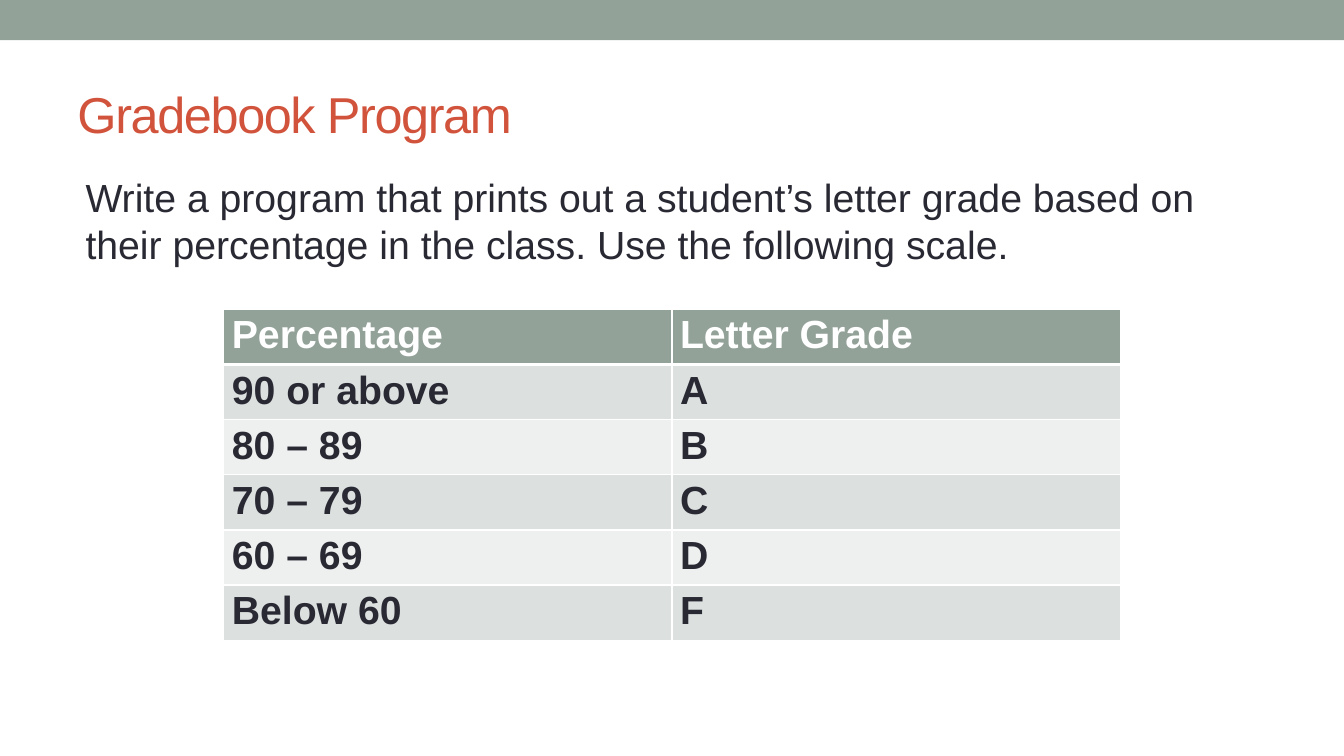
from lxml import etree
from pptx import Presentation, util as u
from pptx.dml.color import RGBColor
from pptx.enum import shapes, text
from pptx.oxml.ns import qn

COLORS = {"sage": "93A299", "rust": "D2533C", "ink": "292934",
          "white": "FFFFFF", "dark": "DCE0DE", "light": "EEF0EF"}
GRADES = [("Percentage", "Letter Grade"), ("90 or above", "A"),
          ("80 – 89", "B"), ("70 – 79", "C"),
          ("60 – 69", "D"), ("Below 60", "F")]


class Deck:
    def __init__(self, slide, font):
        self.slide = slide
        self.font = font

    def color(self, name):
        return RGBColor.from_string(COLORS[name])

    def paint(self, item, name):
        item.fill.solid()
        item.fill.fore_color.rgb = self.color(name)

    def run(self, para, words, size, color, bold=False, space=None):
        run = para.add_run()
        run.text = words
        run.font.name = self.font
        run.font.size = u.Pt(size)
        run.font.bold = bold
        run.font.color.rgb = self.color(color)
        if space is not None:
            run.font._element.set("spc", str(space * 100))

    def bar(self, box, color):
        bar = self.slide.shapes.add_shape(
            shapes.MSO_SHAPE.RECTANGLE, *map(u.Inches, box))
        bar.shadow.inherit = False
        self.paint(bar, color)
        bar.line.fill.background()

    def label(self, box, words, size, color, anchor, space=None):
        frame = self.slide.shapes.add_textbox(*map(u.Inches, box)).text_frame
        frame.word_wrap = True
        frame.vertical_anchor = anchor
        self.run(frame.paragraphs[0], words, size, color, space=space)

    def edge(self, cell, side, width):
        line = etree.SubElement(cell._tc.get_or_add_tcPr(), qn("a:" + side),
                                w=str(u.Pt(width)))
        fill = etree.SubElement(line, qn("a:solidFill"))
        etree.SubElement(fill, qn("a:srgbClr"), val=COLORS["white"])

    def table(self, box, rows, size):
        grid = self.slide.shapes.add_table(
            len(rows), len(rows[0]), *map(u.Inches, box)).table
        for i, row in enumerate(rows):
            for j, words in enumerate(row):
                cell = grid.cell(i, j)
                cell.margin_left = cell.margin_right = u.Inches(0.08)
                cell.margin_top = cell.margin_bottom = u.Inches(0.04)
                for side in ("lnL", "lnR", "lnT", "lnB"):
                    thick = (i, side) in ((0, "lnB"), (1, "lnT"))
                    self.edge(cell, side, 3 if thick else 1)
                self.paint(cell, "sage" if i == 0 else
                           "dark" if i % 2 else "light")
                self.run(cell.text_frame.paragraphs[0], words, size,
                         "ink" if i else "white", bold=True)


def main():
    show = Presentation()
    show.slide_width = u.Inches(13.33)
    show.slide_height = u.Inches(7.5)
    deck = Deck(show.slides.add_slide(show.slide_layouts[6]), "Arial")
    deck.bar((0, 0, 13.33, 0.4), "sage")
    deck.label((0.67, 0.58, 12, 1.08), "Gradebook Program", 36, "rust",
               text.MSO_ANCHOR.MIDDLE, space=-1)
    deck.label((0.75, 1.67, 11.64, 1.08),
               "Write a program that prints out a student’s letter grade "
               "based on their percentage in the class. "
               "Use the following scale.", 28, "ink", text.MSO_ANCHOR.TOP)
    deck.table((2.22, 3.07, 8.89, 3.2), GRADES, 28)
    show.save("out.pptx")


if __name__ == "__main__":
    main()
